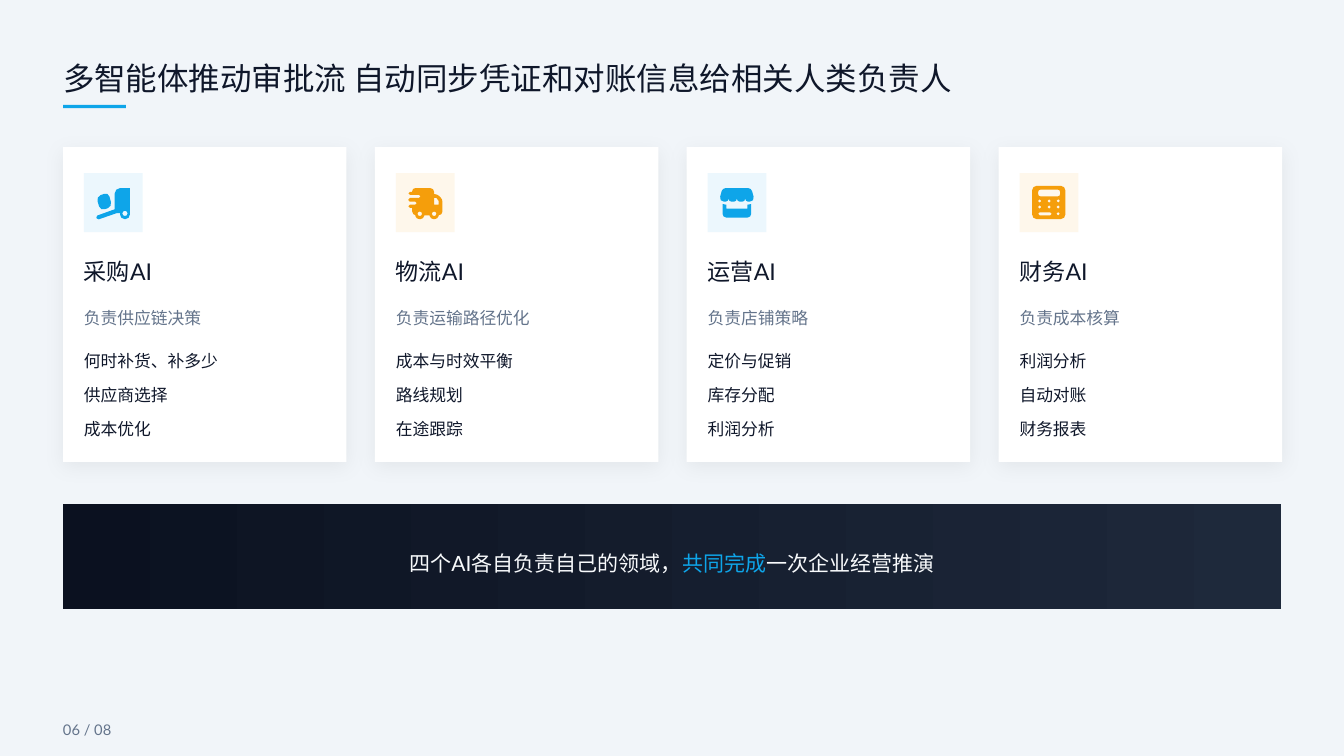
from dataclasses import dataclass
from math import dist

from lxml.etree import SubElement
from pptx import Presentation
from pptx.dml.color import RGBColor
from pptx.enum.shapes import MSO_SHAPE as Preset
from pptx.enum.text import MSO_ANCHOR as Anchor, MSO_AUTO_SIZE as AutoSize, PP_ALIGN as Align
from pptx.oxml.ns import qn
from pptx.util import Inches, Pt


@dataclass(frozen=True)
class Theme:
    font: str = "Lato"
    page: str = "F1F5F9"
    card: str = "FFFFFF"
    ink: str = "0F172A"
    muted: str = "64748B"
    blue: str = "0EA5E9"
    amber: str = "F59E0B"
    band_start: str = "0B1120"
    band_end: str = "1E293B"
    on_band: str = "F8FAFC"
    title_size: int = 30
    heading_size: int = 22
    band_size: int = 20
    body_size: int = 16
    footer_size: int = 14


THEME = Theme()
UNITS_PER_INCH = 72
CARD_WIDTH, CARD_GAP = 270, 27
ARC = 0.55


def units(value):
    return Inches(value / UNITS_PER_INCH)


@dataclass(frozen=True)
class Box:
    left: float
    top: float
    width: float
    height: float

    def inner(self, dx, dy, width, height):
        return Box(self.left + dx, self.top + dy, width, height)

    def lengths(self):
        return [units(v) for v in (self.left, self.top, self.width, self.height)]


def toward(start, end, length):
    share = length / dist(start, end)
    return tuple(a + (b - a) * share for a, b in zip(start, end))


def rounded(*corners):
    steps = []
    for i, (x, y, radius) in enumerate(corners):
        corner = (x, y)
        before, after = corners[i - 1][:2], corners[(i + 1) % len(corners)][:2]
        start = toward(corner, before, radius)
        if not steps or dist(steps[-1][-1], start) > 0.01:
            steps.append([start])
        if radius:
            pull = radius * (1 - ARC)
            steps.append([toward(corner, before, pull), toward(corner, after, pull),
                          toward(corner, after, radius)])
    return steps


def panel(left, top, right, bottom, radius):
    return rounded((left, top, radius), (right, top, radius),
                   (right, bottom, radius), (left, bottom, radius))


def circle(x, y, radius):
    return panel(x - radius, y - radius, x + radius, y + radius, radius)


SCALLOPS = [corner for x in (33, 22, 11) for corner in ((x, 21, 4), (x, 17, 0), (x, 21, 4))]
STRIPES = [(0, 29, 2), (0, 25, 2), (11, 25, 2), (11, 21, 2), (0, 21, 2),
           (0, 16, 2), (16, 16, 2), (16, 12, 2), (0, 12, 2), (0, 8, 2)]

DOLLY = [
    rounded((24, 3, 7), (44, 3, 0), (44, 44, 6), (31, 44, 6), (31, 36, 0), (27, 36, 0),
            (1, 45, 2), (-1, 40, 2), (24, 31, 0)),
    circle(37.5, 36.5, 3.5),
    rounded((-0.5, 14.5, 6), (15.5, 8.5, 6), (20.5, 27.5, 6), (5, 33, 6)),
]
TRUCK = [
    rounded((5, 3, 4), (34, 3, 5), (34, 11, 0), (38, 11, 3), (45, 18, 3), (45, 39, 5),
            (40, 39, 0), (39, 44, 4), (29, 44, 4), (28, 39, 0), (21, 39, 0),
            (20, 44, 4), (10, 44, 4), (9, 39, 0), (5, 39, 5), (5, 29, 0),
            *STRIPES, (5, 8, 0)),
    rounded((40, 25, 0), (40, 20, 0), (37, 16, 0), (34, 16, 0), (34, 25, 0)),
    circle(15, 37, 3),
    circle(34, 37, 3),
]
STORE = [
    rounded((3, 3, 4), (41, 3, 4), (46, 21, 7), *SCALLOPS, (-2, 21, 7)),
    rounded((8, 30, 0), (36, 30, 0), (36, 25, 0), (41, 24, 0), (41, 42, 5),
            (3, 42, 5), (3, 24, 0), (8, 25, 0)),
]
CALCULATOR = [
    panel(0, 0, 44, 44, 6),
    panel(8, 5, 37, 14, 3),
    *[circle(x, y, 2.3) for y in (20, 28) for x in (10, 22.5, 34.5)],
    panel(8, 35, 26, 39, 2),
    circle(34.5, 37, 2.3),
]

AGENTS = [
    ("采购AI", "负责供应链决策", ["何时补货、补多少", "供应商选择", "成本优化"], DOLLY, THEME.blue),
    ("物流AI", "负责运输路径优化", ["成本与时效平衡", "路线规划", "在途跟踪"], TRUCK, THEME.amber),
    ("运营AI", "负责店铺策略", ["定价与促销", "库存分配", "利润分析"], STORE, THEME.blue),
    ("财务AI", "负责成本核算", ["利润分析", "自动对账", "财务报表"], CALCULATOR, THEME.amber),
]


def rgb(color):
    return RGBColor.from_string(color)


def paint(shape, color):
    shape.fill.solid()
    shape.fill.fore_color.rgb = rgb(color)
    shape.line.fill.background()
    shape.shadow.inherit = False


def add_block(slide, box, color):
    block = slide.shapes.add_shape(Preset.RECTANGLE, *box.lengths())
    paint(block, color)
    return block


def set_alpha(color_element, percent):
    SubElement(color_element, qn("a:alpha"), val=str(percent * 1000))


def add_soft_shadow(shape):
    effects = shape._element.spPr.find(qn("a:effectLst"))
    shadow = SubElement(effects, qn("a:outerShdw"), blurRad=str(Pt(20)), dist=str(Pt(4)),
                        dir="5400000", algn="ctr", rotWithShape="0")
    set_alpha(SubElement(shadow, qn("a:srgbClr"), val="000000"), 6)


def write(holder, paragraphs, size, spacing, wrap=False, anchor=Anchor.TOP, align=Align.LEFT):
    frame = holder.text_frame
    frame.auto_size = AutoSize.NONE
    frame.word_wrap = wrap
    frame.vertical_anchor = anchor
    frame.margin_left = frame.margin_top = frame.margin_right = frame.margin_bottom = 0
    for i, (before, runs) in enumerate(paragraphs):
        paragraph = frame.add_paragraph() if i else frame.paragraphs[0]
        paragraph.alignment = align
        paragraph.line_spacing = spacing
        paragraph.space_before = Pt(before)
        for words, color in runs:
            run = paragraph.add_run()
            run.text = words
            run.font.name = THEME.font
            run.font.size = Pt(size)
            run.font.color.rgb = rgb(color)


def add_text(slide, box, *args, **options):
    write(slide.shapes.add_textbox(*box.lengths()), *args, **options)


def add_title(slide, box):
    title = slide.shapes.title
    title.left, title.top, title.width, title.height = box.inner(0, 0, 900, 48).lengths()
    words = "多智能体推动审批流 自动同步凭证和对账信息给相关人类负责人"
    write(title, [(0, [(words, THEME.ink)])], THEME.title_size, 1.3)
    add_block(slide, box.inner(0, 55, 60, 3), THEME.blue)


def add_icon(slide, box, outlines, color):
    builder = None
    for outline in outlines:
        start, *points = [(Inches(x / 100), Inches(y / 100)) for step in outline for x, y in step]
        if builder:
            builder.move_to(*start)
        else:
            builder = slide.shapes.build_freeform(*start)
        builder.add_line_segments(points)
    icon = builder.convert_to_shape(units(box.left), units(box.top))
    lines = icon._element.iter(qn("a:lnTo"))
    lines = iter(list(lines))
    for step in (step for outline in outlines for step in outline[1:]):
        line = next(lines)
        if len(step) == 3:
            line.tag = qn("a:cubicBezTo")
            for _ in range(2):
                control = next(lines)
                line.append(control[0])
                control.getparent().remove(control)
    paint(icon, color)


def add_agent_card(slide, box, name, duty, tasks, outlines, accent):
    add_soft_shadow(add_block(slide, box, THEME.card))
    tile = add_block(slide, box.inner(20, 25, 56, 56), accent)
    set_alpha(tile._element.spPr.find(qn("a:solidFill"))[0], 8)
    add_icon(slide, box.inner(32, 37, 32, 32), outlines, accent)
    add_text(slide, box.inner(20, 100, 230, 32), [(0, [(name, THEME.ink)])],
             THEME.heading_size, 1.2)
    lines = [(0, [(duty, THEME.muted)])]
    lines += [(0 if i else 8, [(task, THEME.ink)]) for i, task in enumerate(tasks)]
    add_text(slide, box.inner(20, 140, 230, 140), lines, THEME.body_size, 1.7, wrap=True)


def add_summary_band(slide, box):
    band = add_block(slide, box, THEME.band_start)
    band.fill.gradient()
    band.fill.gradient_angle = 0
    for stop, color, position in zip(band.fill.gradient_stops,
                                     (THEME.band_start, THEME.band_end), (0, 1)):
        stop.color.rgb = rgb(color)
        stop.position = position
    message = [("四个AI各自负责自己的领域，", THEME.on_band), ("共同完成", THEME.blue),
               ("一次企业经营推演", THEME.on_band)]
    add_text(slide, box.inner(30, 15, box.width - 60, 70), [(0, message)],
             THEME.band_size, 1.5, wrap=True, anchor=Anchor.MIDDLE, align=Align.CENTER)


def main():
    deck = Presentation()
    deck.slide_width, deck.slide_height = units(1280), units(720)
    slide = deck.slides.add_slide(deck.slide_layouts[5])
    slide.background.fill.solid()
    slide.background.fill.fore_color.rgb = rgb(THEME.page)

    body = Box(60, 45, 1160, 661)
    add_title(slide, body)
    for i, agent in enumerate(AGENTS):
        add_agent_card(slide, body.inner(i * (CARD_WIDTH + CARD_GAP), 95, CARD_WIDTH, 300), *agent)
    add_summary_band(slide, body.inner(0, 435, body.width, 100))
    add_text(slide, body.inner(0, 635, 80, 26), [(0, [("06 / 08", THEME.muted)])],
             THEME.footer_size, 1.4)
    deck.save("out.pptx")


if __name__ == "__main__":
    main()
